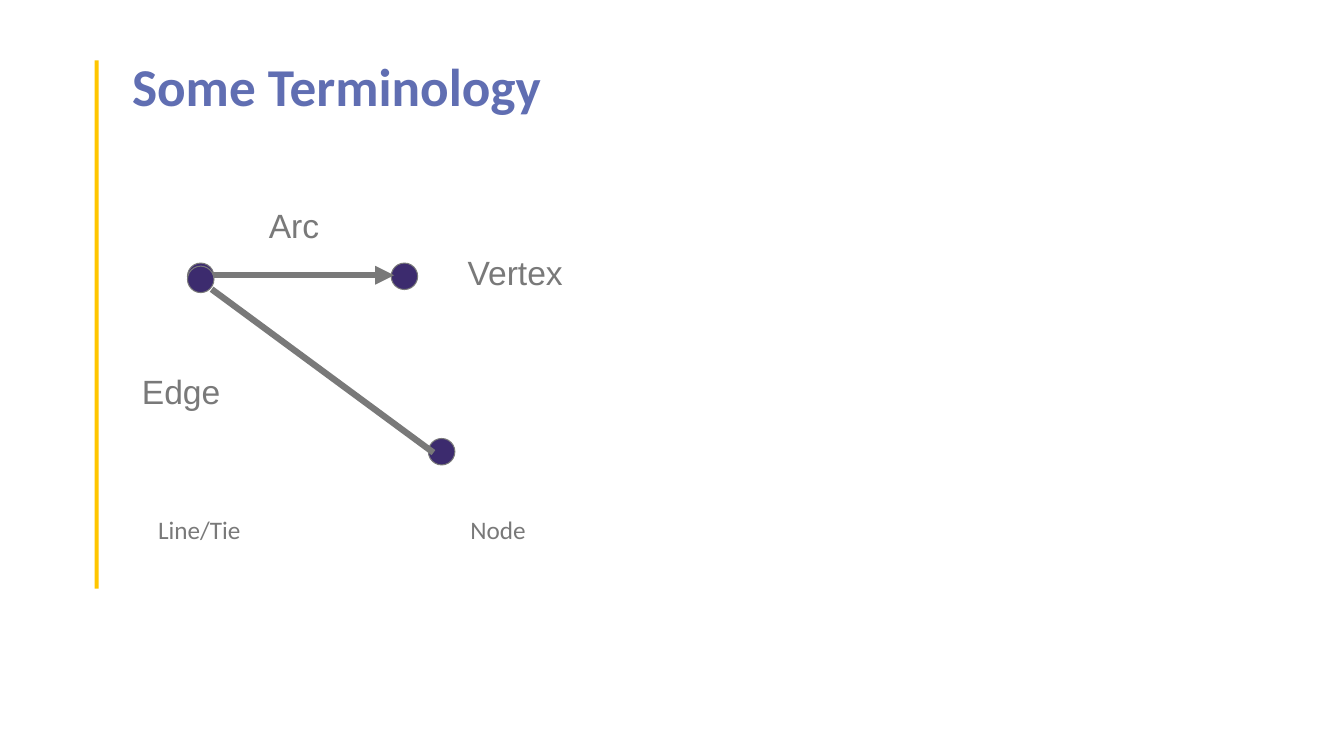
from lxml import etree
from pptx import Presentation
from pptx.dml.color import RGBColor
from pptx.enum.shapes import MSO_CONNECTOR, MSO_SHAPE
from pptx.enum.text import MSO_ANCHOR, PP_ALIGN
from pptx.oxml.ns import qn
from pptx.util import Pt

OVAL = MSO_SHAPE.OVAL
RECT = MSO_SHAPE.RECTANGLE
LINE = MSO_CONNECTOR.STRAIGHT
TOP = MSO_ANCHOR.TOP
LEFT = PP_ALIGN.LEFT

GOLD = RGBColor(0xFF, 0xC6, 0x00)
BLUE = RGBColor(0x60, 0x6E, 0xB2)
PLUM = RGBColor(0x3C, 0x2B, 0x6E)
GRAY = RGBColor(0x79, 0x79, 0x79)

DOT = 18.9  # diameter of a vertex


def add_run(frame, text, font, size, color, bold=False):
    para = frame.paragraphs[0]
    para.alignment = LEFT
    run = para.add_run()
    run.text = text
    run.font.name = font
    run.font.size = Pt(size)
    run.font.bold = bold
    run.font.color.rgb = color
    return para


def set_title(slide, text):
    title = slide.shapes.title
    title.left, title.top = Pt(94.3), Pt(43.2)
    title.width, title.height = Pt(793.4), Pt(79.2)
    frame = title.text_frame
    frame.margin_left = frame.margin_right = 0
    frame.margin_top = frame.margin_bottom = 0
    frame.vertical_anchor = TOP
    frame.word_wrap = True
    para = add_run(frame, text, "Calibri", 38, BLUE, True)
    para.line_spacing = 0.9


def add_bar(slide):
    bar = slide.shapes.add_shape(RECT, Pt(67.7), Pt(43.2), Pt(2.9), Pt(377.3))
    bar.shadow.inherit = False
    bar.fill.solid()
    bar.fill.fore_color.rgb = GOLD
    bar.line.fill.background()


def add_dot(slide, left, top):
    dot = slide.shapes.add_shape(OVAL, Pt(left), Pt(top), Pt(DOT), Pt(DOT))
    dot.shadow.inherit = False
    dot.fill.solid()
    dot.fill.fore_color.rgb = PLUM
    dot.line.color.rgb = GRAY
    dot.line.width = Pt(0.75)


def add_link(slide, start, end, arrow=False):
    link = slide.shapes.add_connector(LINE, *map(Pt, start + end))
    link.line.color.rgb = GRAY
    link.line.width = Pt(4.5)
    if arrow:
        etree.SubElement(link.line._get_or_add_ln(), qn("a:tailEnd"), type="triangle")
    etree.SubElement(link._element.spPr, qn("a:effectLst"))


def add_label(slide, text, left, top, width, font, size):
    box = slide.shapes.add_textbox(Pt(left), Pt(top), Pt(width), Pt(36))
    box.text_frame.word_wrap = True
    add_run(box.text_frame, text, font, size, GRAY)


def main():
    deck = Presentation()
    deck.slide_width, deck.slide_height = Pt(960), Pt(540)
    slide = deck.slides.add_slide(deck.slide_layouts[5])

    # Heading and side bar
    add_bar(slide)
    set_title(slide, "Some Terminology")

    # Directed arc between two vertices
    add_dot(slide, 279.4, 187.9)
    add_dot(slide, 133.9, 187.9)
    add_link(slide, (151.2, 196.6), (281.5, 196.6), arrow=True)

    # Undirected edge between two vertices
    add_dot(slide, 306, 313.2)
    add_dot(slide, 133.9, 190.1)
    add_link(slide, (151.2, 206.6), (309.6, 323.3))

    # Terms
    for text, left, top in (
        ("Vertex", 326.9, 176.4),
        ("Arc", 185, 142.6),
        ("Edge", 94.3, 261.4),
    ):
        add_label(slide, text, left, top, 90.7, "Arial", 24)
    add_label(slide, "Line/Tie", 105.8, 363.6, 142.6, "Calibri", 18)
    add_label(slide, "Node", 329, 363.6, 88.6, "Calibri", 18)

    deck.save("out.pptx")


if __name__ == "__main__":
    main()
